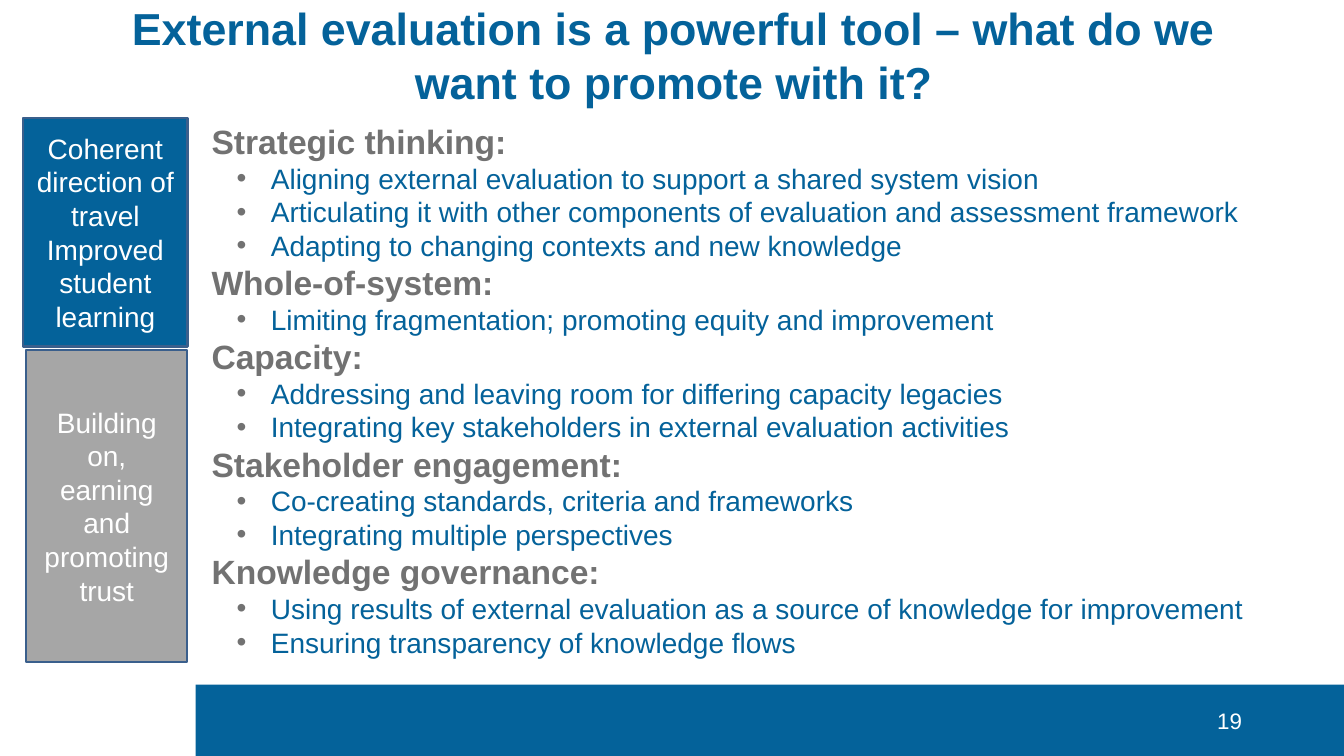
import pptx
import pptx.dml.color
import pptx.enum.shapes
import pptx.enum.text
import pptx.oxml.ns
import pptx.util
from lxml import etree

Pt = pptx.util.Pt
RGBColor = pptx.dml.color.RGBColor
PP_ALIGN = pptx.enum.text.PP_ALIGN
MSO_ANCHOR = pptx.enum.text.MSO_ANCHOR

BLUE = RGBColor(0x04, 0x62, 0x9A)
GREY = RGBColor(0x72, 0x72, 0x72)
LIGHT_GREY = RGBColor(0xA6, 0xA6, 0xA6)
OUTLINE = RGBColor(0x3A, 0x5F, 0x8C)
WHITE = RGBColor(0xFF, 0xFF, 0xFF)

TOPICS = {
    "Strategic thinking:": [
        "Aligning external evaluation to support a shared system vision",
        "Articulating it with other components of evaluation and assessment framework",
        "Adapting to changing contexts and new knowledge",
    ],
    "Whole-of-system:": ["Limiting fragmentation; promoting equity and improvement"],
    "Capacity:": [
        "Addressing and leaving room for differing capacity legacies",
        "Integrating key stakeholders in external evaluation activities",
    ],
    "Stakeholder engagement:": [
        "Co-creating standards, criteria and frameworks",
        "Integrating multiple perspectives",
    ],
    "Knowledge governance:": [
        "Using results of external evaluation as a source of knowledge for improvement",
        "Ensuring transparency of knowledge flows",
    ],
}


def write(frame, text, size=20, color=WHITE, bold=False, align=PP_ALIGN.LEFT,
          left=0, hanging=0, bullet_color=None):
    paragraph = frame.paragraphs[0]
    if paragraph.runs:
        paragraph = frame.add_paragraph()
    properties = paragraph._p.get_or_add_pPr()
    properties.set("marL", str(Pt(left)))
    properties.set("indent", str(-Pt(hanging)))
    if bullet_color is not None:
        qn = pptx.oxml.ns.qn
        bullet_fill = etree.SubElement(properties, qn("a:buClr"))
        etree.SubElement(bullet_fill, qn("a:srgbClr"), val=str(bullet_color))
        etree.SubElement(properties, qn("a:buFont"), typeface="Arial")
        etree.SubElement(properties, qn("a:buChar"), char="•")
    paragraph.alignment = align
    run = paragraph.add_run()
    run.text = text
    run.font.name = "Arial"
    run.font.size = Pt(size)
    run.font.bold = bold
    run.font.color.rgb = color


class SlideBuilder:
    def __init__(self, slide, font_margin=8.5):
        self.slide = slide
        self.font_margin = font_margin

    def text_box(self, left, top, width, height, anchor=MSO_ANCHOR.MIDDLE):
        shape = self.slide.shapes.add_textbox(Pt(left), Pt(top), Pt(width), Pt(height))
        frame = shape.text_frame
        frame.word_wrap = True
        frame.vertical_anchor = anchor
        return frame

    def rectangle(self, left, top, width, height, fill, outline=None):
        shape = self.slide.shapes.add_shape(
            pptx.enum.shapes.MSO_SHAPE.RECTANGLE,
            Pt(left), Pt(top), Pt(width), Pt(height))
        shape.shadow.inherit = False
        shape.fill.solid()
        shape.fill.fore_color.rgb = fill
        if outline is None:
            shape.line.fill.background()
        else:
            shape.line.color.rgb = outline
            shape.line.width = Pt(1.5)
        return shape

    def side_panel(self, left, top, width, height, fill, messages):
        frame = self.rectangle(left, top, width, height, fill, OUTLINE).text_frame
        frame.word_wrap = True
        frame.vertical_anchor = MSO_ANCHOR.MIDDLE
        frame.margin_left = frame.margin_right = Pt(self.font_margin)
        for message in messages:
            write(frame, message, align=PP_ALIGN.CENTER)

    def topic_list(self, left, top, width, height, topics):
        frame = self.text_box(left, top, width, height, MSO_ANCHOR.TOP)
        for heading, points in topics.items():
            write(frame, heading, size=24, color=GREY, bold=True, left=77.8)
            for point in points:
                write(frame, point, color=BLUE, left=120.2, hanging=24.5,
                      bullet_color=GREY)


def main():
    presentation = pptx.Presentation()
    presentation.slide_width = Pt(960)
    presentation.slide_height = Pt(540)
    slide = presentation.slides.add_slide(presentation.slide_layouts[6])
    builder = SlideBuilder(slide)

    builder.rectangle(139.7, 489, 820.3, 51, BLUE)
    builder.topic_list(66.2, 82.8, 862.6, 399.6, TOPICS)
    title = builder.text_box(52.6, 8.6, 857.5, 60.5)
    write(title, "External evaluation is a powerful tool – what do we want to promote with it?",
          size=32, color=BLUE, bold=True, align=PP_ALIGN.CENTER)
    page_number = builder.text_box(678.2, 500.4, 216, 28.8)
    write(page_number, "19", size=16, align=PP_ALIGN.RIGHT)
    builder.side_panel(16.6, 84.2, 117.4, 163.4, BLUE,
                       ["Coherent direction of travel", "Improved student learning"])
    builder.side_panel(18.7, 249.8, 115.2, 223.2, LIGHT_GREY,
                       ["Building on, earning and promoting trust"])
    presentation.save("out.pptx")


if __name__ == "__main__":
    main()
